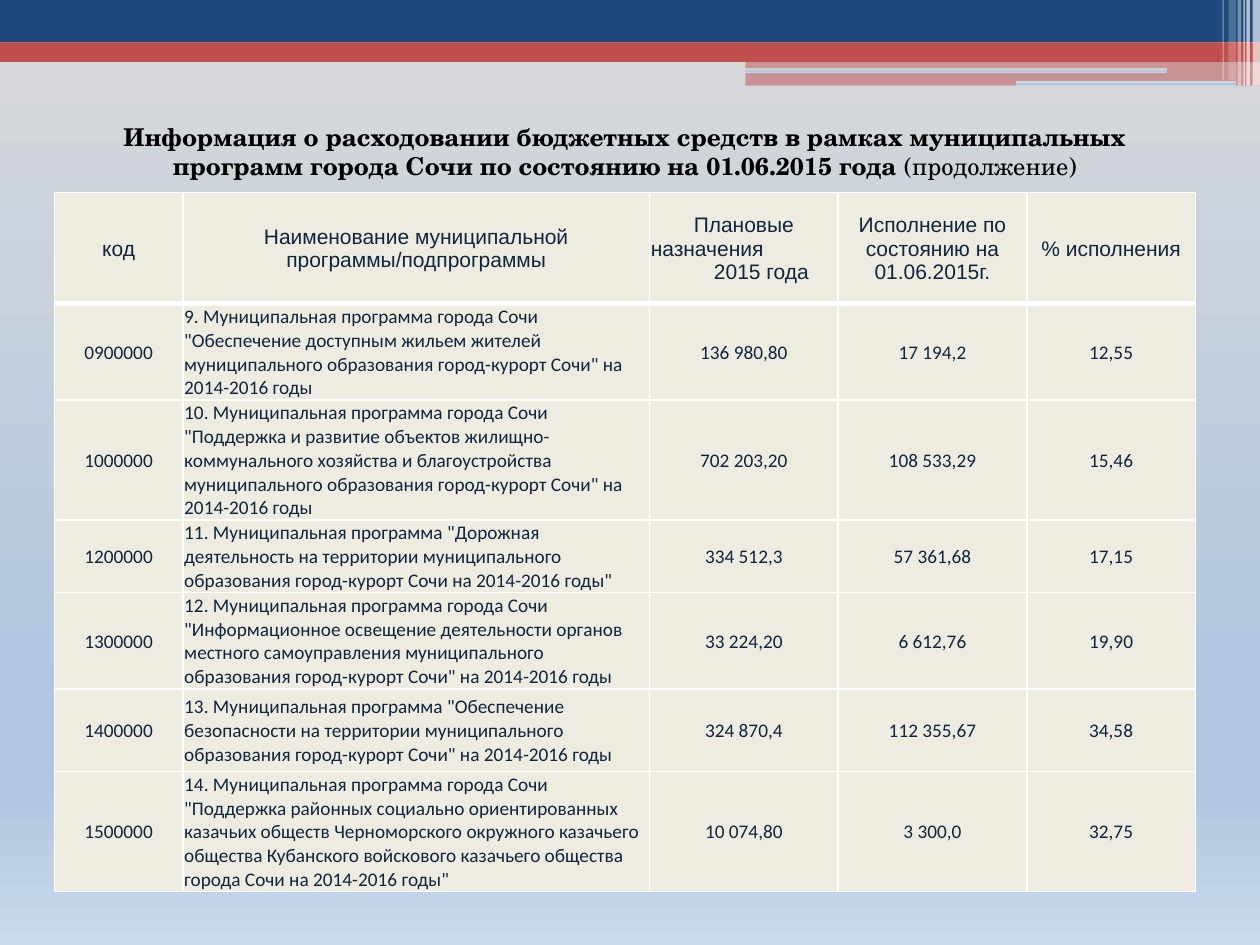
from lxml import etree
from pptx import Presentation
from pptx.dml.color import RGBColor
from pptx.enum import shapes, text
from pptx.oxml.ns import qn
from pptx.util import Pt

NAVY, RED, WHITE, CREAM, INK = "1F497D", "C0504D", "FFFFFF", "EEECE1", "0F243E"
STOPS = [(0, "D9D9D9"), (74, "B0C6E1"), (83, "B0C6E1"), (100, "CAD9EB")]


def rgb(value):
    return RGBColor.from_string(value)


def set_gradient(fill, owner):
    """Fill top to bottom with STOPS; owner is the XML element holding the fill."""
    fill.gradient()
    fill.gradient_angle = 270
    stops = next(owner.iter(qn("a:gsLst")))
    for old in list(stops):
        stops.remove(old)
    for pos, color in STOPS:
        gs = etree.SubElement(stops, qn("a:gs"), pos=str(pos * 1000))
        etree.SubElement(gs, qn("a:srgbClr"), val=color)


prs = Presentation()
prs.slide_width, prs.slide_height = Pt(720), Pt(540)
s = prs.slides.add_slide(prs.slide_layouts[6])
set_gradient(s.background.fill, s.element)

# Header bands: left, top, width, height, colour (None = gradient), opacity %
bands = [
    (0, 28.8, 720, 6.6, RED, 50),
    (0, 0, 720, 24.2, NAVY, 100),
    (0, 24.2, 720, 11.2, RED, 100),
    (426, 28, 294, 7.4, RED, 100),
    (426, 34.8, 294, 14.2, RED, 50),
    (425.8, 39, 241.2, 2.4, None, 100),
    (580.3, 46.2, 126, 2.6, None, 100),
    (715.8, 0, 4.2, 49, WHITE, 65),
    (712.2, 0, 2, 49, WHITE, 65),
    (710.6, 0, 0.8, 49, WHITE, 60),
    (707.2, 0, 2, 49, WHITE, 40),
    (702, 0, 4.3, 46, WHITE, 20),
    (698.6, 0, 0.8, 46, WHITE, 30),
]
for left, top, width, height, color, opacity in bands:
    kind = shapes.MSO_SHAPE.RECTANGLE if color else shapes.MSO_SHAPE.ROUNDED_RECTANGLE
    sp = s.shapes.add_shape(kind, Pt(left), Pt(top), Pt(width), Pt(height))
    sp.shadow.inherit = False
    sp.line.fill.background()
    if color is None:
        set_gradient(sp.fill, sp.element)
        continue
    sp.fill.solid()
    sp.fill.fore_color.rgb = rgb(color)
    if opacity < 100:
        clr = next(sp.element.spPr.iter(qn("a:srgbClr")))
        etree.SubElement(clr, qn("a:alpha"), val=str(opacity * 1000))

# Table; a list in a cell is one paragraph per line
rows = [
    ("код", "Наименование муниципальной программы/подпрограммы",
     ["Плановые", "назначения", "2015 года"],
     "Исполнение по состоянию на 01.06.2015г.", "% исполнения"),
    ("0900000", '9. Муниципальная программа города Сочи "Обеспечение доступным жильем жителей '
     'муниципального образования город-курорт Сочи" на 2014-2016 годы',
     "136 980,80", "17 194,2", "12,55"),
    ("1000000", '10. Муниципальная программа города Сочи "Поддержка и развитие объектов '
     'жилищно-коммунального хозяйства и благоустройства муниципального образования '
     'город-курорт Сочи" на 2014-2016 годы',
     "702 203,20", "108 533,29", "15,46"),
    ("1200000", '11. Муниципальная программа "Дорожная деятельность на территории '
     'муниципального образования город-курорт Сочи на 2014-2016 годы"',
     "334 512,3", "57 361,68", "17,15"),
    ("1300000", '12. Муниципальная программа города Сочи "Информационное освещение деятельности '
     'органов местного самоуправления муниципального образования город-курорт Сочи" '
     'на 2014-2016 годы',
     "33 224,20", "6 612,76", "19,90"),
    ("1400000", '13. Муниципальная программа "Обеспечение безопасности на территории '
     'муниципального образования город-курорт Сочи" на 2014-2016 годы',
     "324 870,4", "112 355,67", "34,58"),
    ("1500000", '14. Муниципальная программа города Сочи "Поддержка районных социально '
     'ориентированных казачьих обществ Черноморского окружного казачьего общества Кубанского '
     'войскового казачьего общества города Сочи на 2014-2016 годы"',
     "10 074,80", "3 300,0", "32,75"),
]
col_widths = [73.6, 266.6, 107.8, 107.8, 96.4]
row_heights = [63.6, 55, 68.5, 41.4, 55, 47.2, 68.5]
table = s.shapes.add_table(len(rows), len(col_widths), Pt(31), Pt(110),
                           Pt(sum(col_widths)), Pt(sum(row_heights))).table
table.first_row = table.horz_banding = False
for col, width in zip(table.columns, col_widths):
    col.width = Pt(width)
for row, height in zip(table.rows, row_heights):
    row.height = Pt(height)

for i, values in enumerate(rows):
    for j, value in enumerate(values):
        cell = table.cell(i, j)
        is_name = i > 0 and j == 1
        cell.margin_left = cell.margin_right = cell.margin_top = Pt(0.7)
        cell.margin_bottom = 0
        cell.vertical_anchor = text.MSO_ANCHOR.MIDDLE
        tf = cell.text_frame
        tf.text = value if isinstance(value, str) else "\n".join(value)
        for p in tf.paragraphs:
            p.alignment = text.PP_ALIGN.LEFT if is_name else text.PP_ALIGN.CENTER
            p.font.name = "Calibri" if i else "Arial"
            p.font.size = Pt(11 if i else 12)
            p.font.color.rgb = rgb(INK)
        tcPr = cell._tc.get_or_add_tcPr()
        for side in "LRTB":
            heavy = (i, side) in ((0, "B"), (1, "T"))
            ln = etree.SubElement(tcPr, qn(f"a:ln{side}"), w=str(Pt(3 if heavy else 1)))
            line_fill = etree.SubElement(ln, qn("a:solidFill"))
            etree.SubElement(line_fill, qn("a:srgbClr"), val=WHITE)
        cell.fill.solid()
        cell.fill.fore_color.rgb = rgb(CREAM)

# The planned-amounts heading is staggered
_, second, third = table.cell(0, 2).text_frame.paragraphs
second.alignment = text.PP_ALIGN.LEFT
third._p.get_or_add_pPr().set("marL", str(Pt(20)))

# Title
tf = s.shapes.add_textbox(Pt(36.7), Pt(66.2), Pt(640.8), Pt(41)).text_frame
tf.word_wrap = True
p = tf.paragraphs[0]
p.alignment = text.PP_ALIGN.CENTER
p.font.name, p.font.size = "TeX Gyre Schola", Pt(14)
p.font.color.rgb = rgb("000000")
for words, bold in (
    ("Информация о расходовании бюджетных средств в рамках муниципальных программ "
     "города Сочи по состоянию на 01.06.2015 года ", True),
    ("(продолжение)", False),
):
    r = p.add_run()
    r.text = words
    r.font.bold = bold

prs.save("out.pptx")
